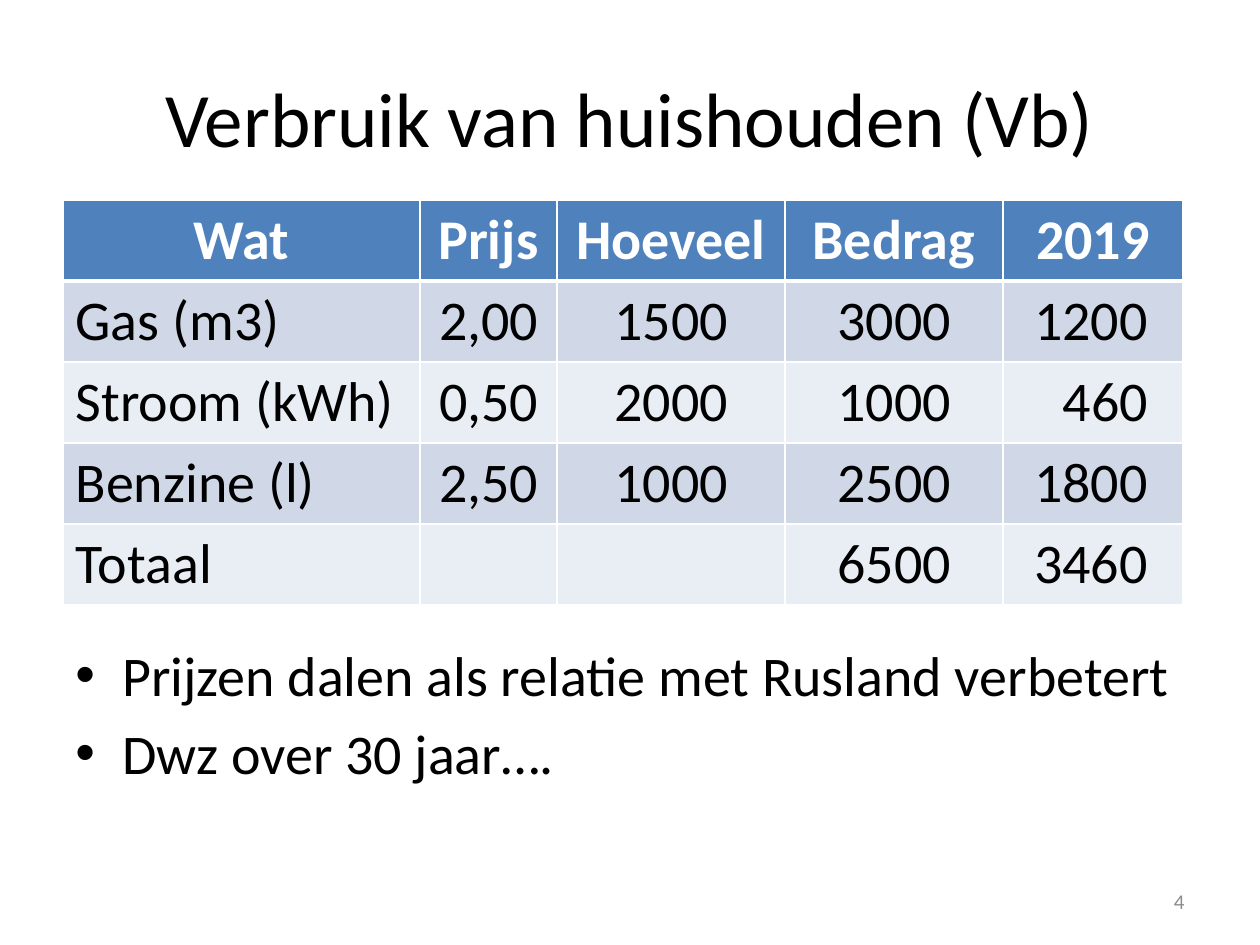
from dataclasses import dataclass

from lxml import etree
from pptx import Presentation, util as u
from pptx.dml.color import RGBColor
from pptx.enum import text as t
from pptx.oxml import ns

EMU_PER_PX = 914400 / 126
FONT = "Calibri"
COLORS = {
    "black": "000000",
    "white": "FFFFFF",
    "header": "4F81BD",
    "odd": "D0D8E8",
    "even": "E9EDF4",
    "number": "8C8C8C",
}
LEFT, CENTER, RIGHT = t.PP_ALIGN.LEFT, t.PP_ALIGN.CENTER, t.PP_ALIGN.RIGHT


@dataclass(frozen=True)
class Column:
    heading: str
    width: int
    values: tuple[str, ...]
    align: t.PP_ALIGN = CENTER
    right_margin: int = 12


COLUMNS = (
    Column("Wat", 357, ("Gas (m3)", "Stroom (kWh)", "Benzine (l)", "Totaal"), LEFT),
    Column("Prijs", 137, ("2,00", "0,50", "2,50", "")),
    Column("Hoeveel", 228, ("1500", "2000", "1000", "")),
    Column("Bedrag", 218, ("3000", "1000", "2500", "6500")),
    Column("2019", 180, ("1200", "460", "1800", "3460"), RIGHT, 35),
)
ROW_HEIGHT = 81
BULLETS = ("Prijzen dalen als relatie met Rusland verbetert", "Dwz over 30 jaar….")


def px(length: int) -> u.Emu:
    return u.Emu(round(length * EMU_PER_PX))


def rgb(name: str) -> RGBColor:
    return RGBColor.from_string(COLORS[name])


def write(para, content: str, *, size: int = 32, color: str = "black",
          bold: bool = False, align: t.PP_ALIGN = LEFT) -> None:
    para.alignment = align
    if not content:
        return
    span = para.add_run()
    span.text = content
    span.font.name = FONT
    span.font.size = u.Pt(size)
    span.font.bold = bold
    span.font.color.rgb = rgb(color)


def add_box(page, left: int, top: int, width: int, height: int,
            anchor: t.MSO_ANCHOR = t.MSO_ANCHOR.TOP):
    """Add a wrapping text box and return its text frame."""
    frame = page.shapes.add_textbox(px(left), px(top), px(width), px(height)).text_frame
    frame.word_wrap = True
    frame.vertical_anchor = anchor
    return frame


def add_bullet(para, indent: int) -> None:
    props = para._p.get_or_add_pPr()
    props.set("marL", str(px(indent)))
    props.set("indent", str(-px(indent)))
    etree.SubElement(props, ns.qn("a:buFont"), typeface="Arial")
    etree.SubElement(props, ns.qn("a:buChar"), char="•")


def add_borders(cell, bottom: int) -> None:
    """Draw white cell borders; only the bottom width, in points, varies."""
    props = cell._tc.get_or_add_tcPr()
    widths = {"a:lnL": 1, "a:lnR": 1, "a:lnT": 1, "a:lnB": bottom}
    for position, (tag, width) in enumerate(widths.items()):
        line = etree.Element(ns.qn(tag), w=str(u.Pt(width)))
        fill = etree.SubElement(line, ns.qn("a:solidFill"))
        etree.SubElement(fill, ns.qn("a:srgbClr"), val=COLORS["white"])
        props.insert(position, line)


def style_cell(cell, fill: str, bottom: int = 1) -> None:
    cell.fill.solid()
    cell.fill.fore_color.rgb = rgb(fill)
    add_borders(cell, bottom)


def add_usage_table(page, left: int, top: int) -> None:
    row_count = 1 + len(COLUMNS[0].values)
    width = sum(column.width for column in COLUMNS)
    table = page.shapes.add_table(row_count, len(COLUMNS), px(left), px(top),
                                  px(width), px(row_count * ROW_HEIGHT)).table
    for row in table.rows:
        row.height = px(ROW_HEIGHT)
    for index, column in enumerate(COLUMNS):
        table.columns[index].width = px(column.width)
        header = table.cell(0, index)
        style_cell(header, "header", bottom=3)
        write(header.text_frame.paragraphs[0], column.heading,
              color="white", bold=True, align=CENTER)
        for number, value in enumerate(column.values, start=1):
            cell = table.cell(number, index)
            style_cell(cell, "odd" if number % 2 else "even")
            cell.margin_right = px(column.right_margin)
            write(cell.text_frame.paragraphs[0], value, align=column.align)


def add_bullets(page) -> None:
    frame = add_box(page, 63, 634, 1134, 226)
    for index, content in enumerate(BULLETS):
        para = frame.add_paragraph() if index else frame.paragraphs[0]
        para.space_before = u.Pt(6.4)
        add_bullet(para, 47)
        write(para, content)


def main() -> None:
    deck = Presentation()
    deck.slide_width, deck.slide_height = px(1260), px(945)
    page = deck.slides.add_slide(deck.slide_layouts[6])

    title = add_box(page, 63, 38, 1134, 158, t.MSO_ANCHOR.MIDDLE)
    write(title.paragraphs[0], "Verbruik van huishouden (Vb)", size=44, align=CENTER)
    add_usage_table(page, 63, 200)
    page_number = add_box(page, 903, 876, 294, 50, t.MSO_ANCHOR.MIDDLE)
    write(page_number.paragraphs[0], "4", size=12, color="number", align=RIGHT)
    add_bullets(page)

    deck.save("out.pptx")


if __name__ == "__main__":
    main()
